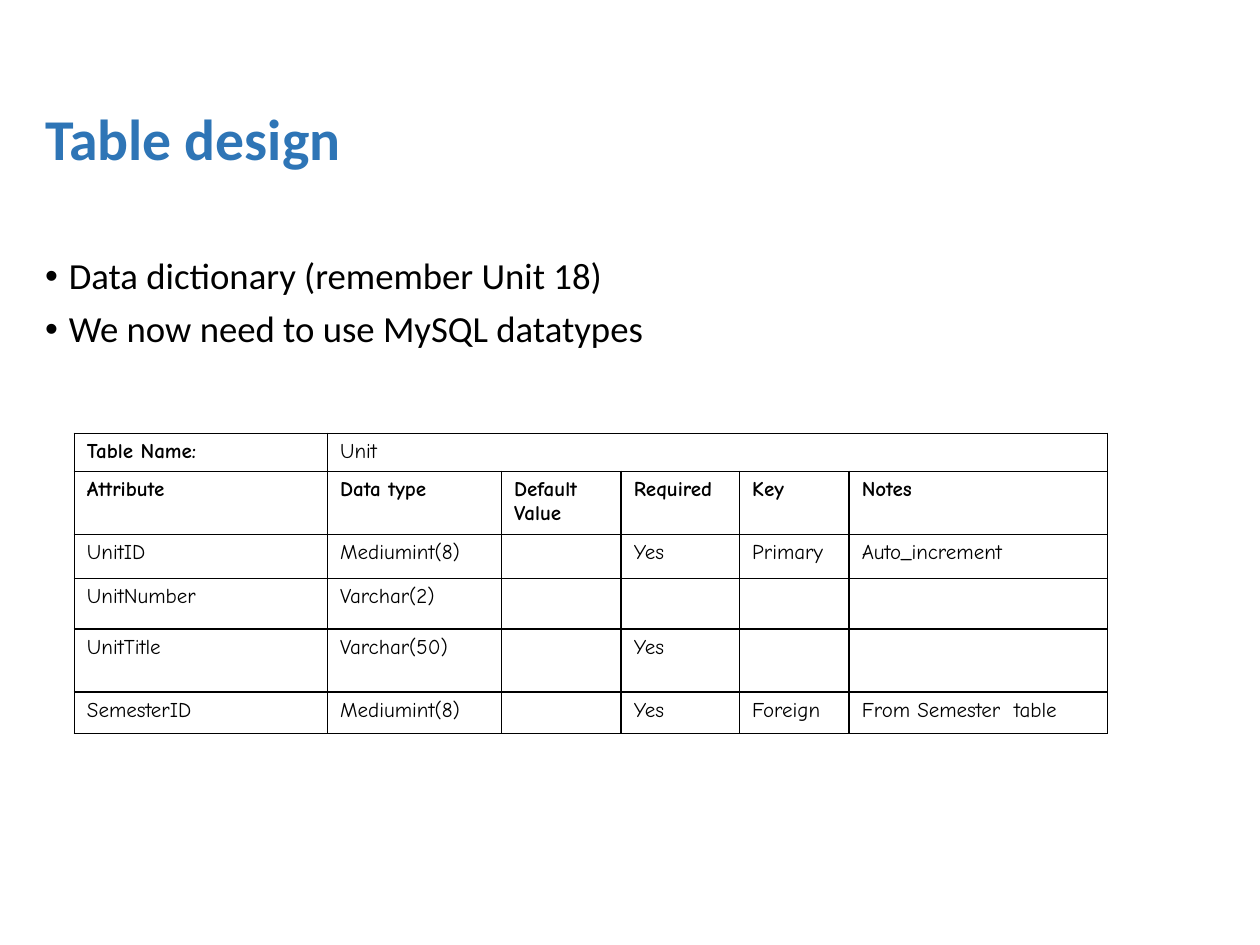
from lxml import etree
from pptx import Presentation
from pptx.dml.color import RGBColor
from pptx.enum import text
from pptx.oxml import ns
from pptx.util import Pt

BLUE = RGBColor(0x2E, 0x75, 0xB6)
BLACK = RGBColor(0, 0, 0)

COLS = [144.7, 99.4, 68.4, 67.7, 62.6, 147.6]
ROWS = [21.6, 36, 25.2, 28.8, 36, 23.8]
CELLS = [
    ["Table Name:", "Unit", "", "", "", ""],
    ["Attribute", "Data type", "Default Value", "Required", "Key", "Notes"],
    ["UnitID", "Mediumint(8)", "", "Yes", "Primary", "Auto_increment"],
    ["UnitNumber", "Varchar(2)", "", "", "", ""],
    ["UnitTitle", "Varchar(50)", "", "Yes", "", ""],
    ["SemesterID", "Mediumint(8)", "", "Yes", "Foreign", "From Semester  table"],
]


def sub(node, tag, **attrs):
    return etree.SubElement(node, ns.qn(tag), **attrs)


def write(para, words, size, font="Calibri", color=BLACK, bold=False, bullet=False):
    if bullet:
        props = para._p.get_or_add_pPr()
        props.set("marL", str(Pt(13.5)))
        props.set("indent", str(Pt(-13.5)))
        sub(props, "a:buFont", typeface="Arial")
        sub(props, "a:buChar", char="•")
    if not words:
        sub(para._p, "a:endParaRPr", sz=str(size * 100))
        return
    run = para.add_run()
    run.text = words
    run.font.size = Pt(size)
    run.font.name = font
    run.font.bold = bold
    run.font.color.rgb = color


def add_box(slide, lines, left, top, width, height, anchor, **form):
    frame = slide.shapes.add_textbox(Pt(left), Pt(top), Pt(width), Pt(height)).text_frame
    frame.word_wrap = True
    frame.vertical_anchor = anchor
    for i, line in enumerate(lines):
        para = frame.add_paragraph() if i else frame.paragraphs[0]
        write(para, line, **form)
        para.line_spacing = 0.9
        if i:
            para.space_before = Pt(7.5)


def add_edges(cell):
    props = cell._tc.get_or_add_tcPr()
    for side in "LRTB":
        line = sub(props, f"a:ln{side}", w=str(Pt(1)))
        sub(sub(line, "a:solidFill"), "a:srgbClr", val=str(BLACK))


def add_grid(slide, left, top):
    shape = slide.shapes.add_table(
        len(ROWS), len(COLS), Pt(left), Pt(top), Pt(sum(COLS)), Pt(sum(ROWS)))
    table = shape.table
    table.first_row = table.horz_banding = False
    for col, width in zip(table.columns, COLS):
        col.width = Pt(width)
    for row, height in zip(table.rows, ROWS):
        row.height = Pt(height)
    table.cell(0, 1).merge(table.cell(0, len(COLS) - 1))
    for r, row in enumerate(CELLS):
        for c, words in enumerate(row):
            cell = table.cell(r, c)
            head = r == 1 or (r, c) == (0, 0)
            write(cell.text_frame.paragraphs[0], words, 12, font="Comic Neue", bold=head)
            add_edges(cell)
            cell.fill.background()


def main():
    deck = Presentation()
    deck.slide_width, deck.slide_height = Pt(720), Pt(540)
    slide = deck.slides.add_slide(deck.slide_layouts[6])
    add_box(slide, ["Table design"], 18.7, 28.8, 684.7, 104.4,
            text.MSO_ANCHOR.MIDDLE, size=33, color=BLUE, bold=True)
    add_box(slide, ["Data dictionary (remember Unit 18)",
                    "We now need to use MySQL datatypes"],
            18.7, 144, 684.7, 388.8, text.MSO_ANCHOR.TOP, size=21, bullet=True)
    add_grid(slide, 42.5, 247.7)
    deck.save("out.pptx")


if __name__ == "__main__":
    main()
